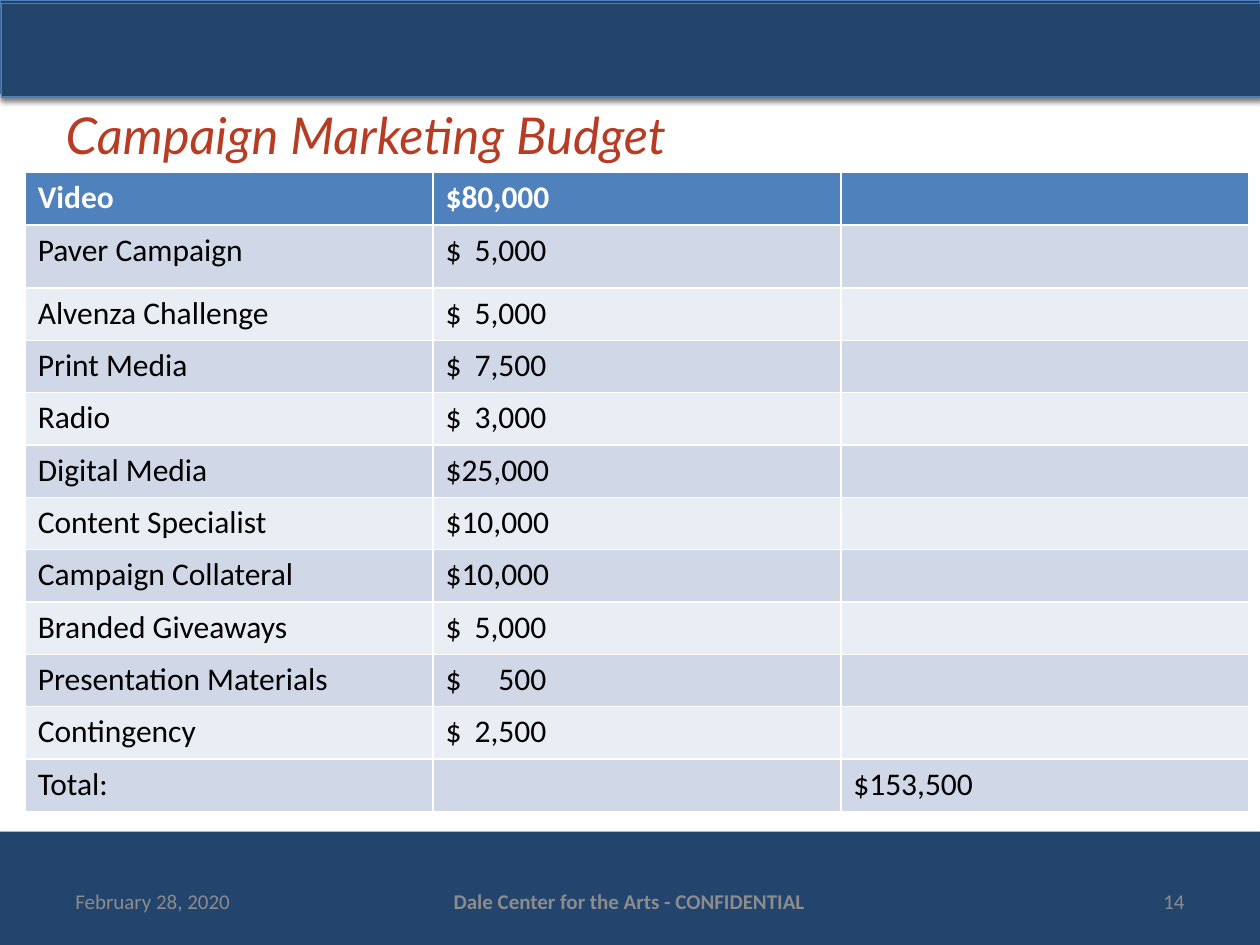
from lxml import etree
from pptx import Presentation
from pptx.dml.color import RGBColor
from pptx.enum.shapes import MSO_SHAPE as Shape
from pptx.enum.text import MSO_ANCHOR as Anchor, PP_ALIGN as Align
from pptx.oxml.ns import qn
from pptx.util import Inches, Pt

COLORS = {
    "navy": "22446D", "edge": "4B7EBC", "header": "4F81BD",
    "band_dark": "D0D8E8", "band_light": "E9EDF4",
    "title": "B73C24", "footer": "8C8C8C",
    "white": "FFFFFF", "black": "000000",
}

# A tab lines up the shorter amounts on the right
BUDGET = [
    ("Video", "$80,000", ""),
    ("Paver Campaign", "$\t5,000", ""),
    ("Alvenza Challenge", "$\t5,000", ""),
    ("Print Media", "$\t7,500", ""),
    ("Radio", "$\t3,000", ""),
    ("Digital Media", "$25,000", ""),
    ("Content Specialist", "$10,000", ""),
    ("Campaign Collateral", "$10,000", ""),
    ("Branded Giveaways", "$\t5,000", ""),
    ("Presentation Materials", "$\t500", ""),
    ("Contingency", "$\t2,500", ""),
    ("Total:", "", "$153,500"),
]


def color(name):
    return RGBColor.from_string(COLORS[name])


def write_text(frame, text, size=18, font="Calibri", fill="black",
               bold=False, italic=False, align=Align.LEFT):
    para = frame.paragraphs[0]
    para.alignment = align
    span = para.add_run()
    span.text = text
    span.font.size = Pt(size)
    span.font.name = font
    span.font.bold = bold
    span.font.italic = italic
    span.font.color.rgb = color(fill)
    return para


def add_shadow(shape):
    shape.shadow.inherit = False
    effects = shape._element.spPr.find(qn("a:effectLst"))
    shadow = etree.SubElement(effects, qn("a:outerShdw"), blurRad=str(Pt(3.1)),
                              dist=str(Pt(1.8)), dir="5400000", rotWithShape="0")
    tint = etree.SubElement(shadow, qn("a:srgbClr"), val=COLORS["black"])
    etree.SubElement(tint, qn("a:alpha"), val="35000")


def add_bar(page, left, top, width, height, edge=None):
    bar = page.shapes.add_shape(Shape.RECTANGLE, Inches(left), Inches(top),
                                Inches(width), Inches(height))
    bar.fill.solid()
    bar.fill.fore_color.rgb = color("navy")
    if edge:
        bar.line.color.rgb = color(edge)
        bar.line.width = Pt(0.75)
    else:
        bar.line.fill.background()
    add_shadow(bar)


def add_footer(page, left, width, text, **style):
    box = page.shapes.add_textbox(Inches(left), Inches(6.95), Inches(width), Inches(0.4))
    frame = box.text_frame
    frame.word_wrap = True
    frame.vertical_anchor = Anchor.MIDDLE
    write_text(frame, text, size=12, fill="footer", **style)


def add_right_tab(para, position):
    tabs = etree.SubElement(para._p.get_or_add_pPr(), qn("a:tabLst"))
    etree.SubElement(tabs, qn("a:tab"), pos=str(Inches(position)), algn="r")


def add_budget_table(page, left, top, width, height, tall_row=0.5):
    table = page.shapes.add_table(len(BUDGET), 3, Inches(left), Inches(top),
                                  Inches(width), Inches(height)).table
    for column in table.columns:
        column.width = Inches(width / 3)
    for index, values in enumerate(BUDGET):
        row_height = tall_row if index == 1 else (height - tall_row) / (len(BUDGET) - 1)
        table.rows[index].height = Inches(row_height)
        band = "header" if index == 0 else "band_dark" if index % 2 else "band_light"
        for cell, value in zip(table.rows[index].cells, values):
            cell.fill.solid()
            cell.fill.fore_color.rgb = color(band)
            if value:
                para = write_text(cell.text_frame, value, bold=index == 0,
                                  fill="black" if index else "white")
                if "\t" in value:
                    add_right_tab(para, 0.8)


def add_title(page, text):
    title = page.shapes.title
    title.left, title.top = Inches(0.42), Inches(0.76)
    title.width, title.height = Inches(9.48), Inches(0.61)
    title.text_frame.vertical_anchor = Anchor.MIDDLE
    write_text(title.text_frame, text, size=29, font="Lato", fill="title", italic=True)


def main():
    deck = Presentation()
    deck.slide_width, deck.slide_height = Inches(10), Inches(7.5)
    page = deck.slides.add_slide(deck.slide_layouts[5])

    # Bands at the bottom and top
    add_bar(page, 0, 6.6, 10.01, 0.9)
    add_bar(page, 0, 0, 10, 0.74, edge="edge")
    add_bar(page, 0.01, 0.03, 10, 0.74, edge="edge")

    # Title and budget
    add_title(page, "Campaign Marketing Budget")
    add_budget_table(page, 0.2, 1.37, 9.71, 5.07)

    # Footer
    add_footer(page, 0.5, 2.33, "February 28, 2020")
    add_footer(page, 2.83, 4.33, "Dale Center for the Arts - CONFIDENTIAL",
               bold=True, align=Align.CENTER)
    add_footer(page, 7.17, 2.33, "14", align=Align.RIGHT)

    deck.save("out.pptx")


if __name__ == "__main__":
    main()
